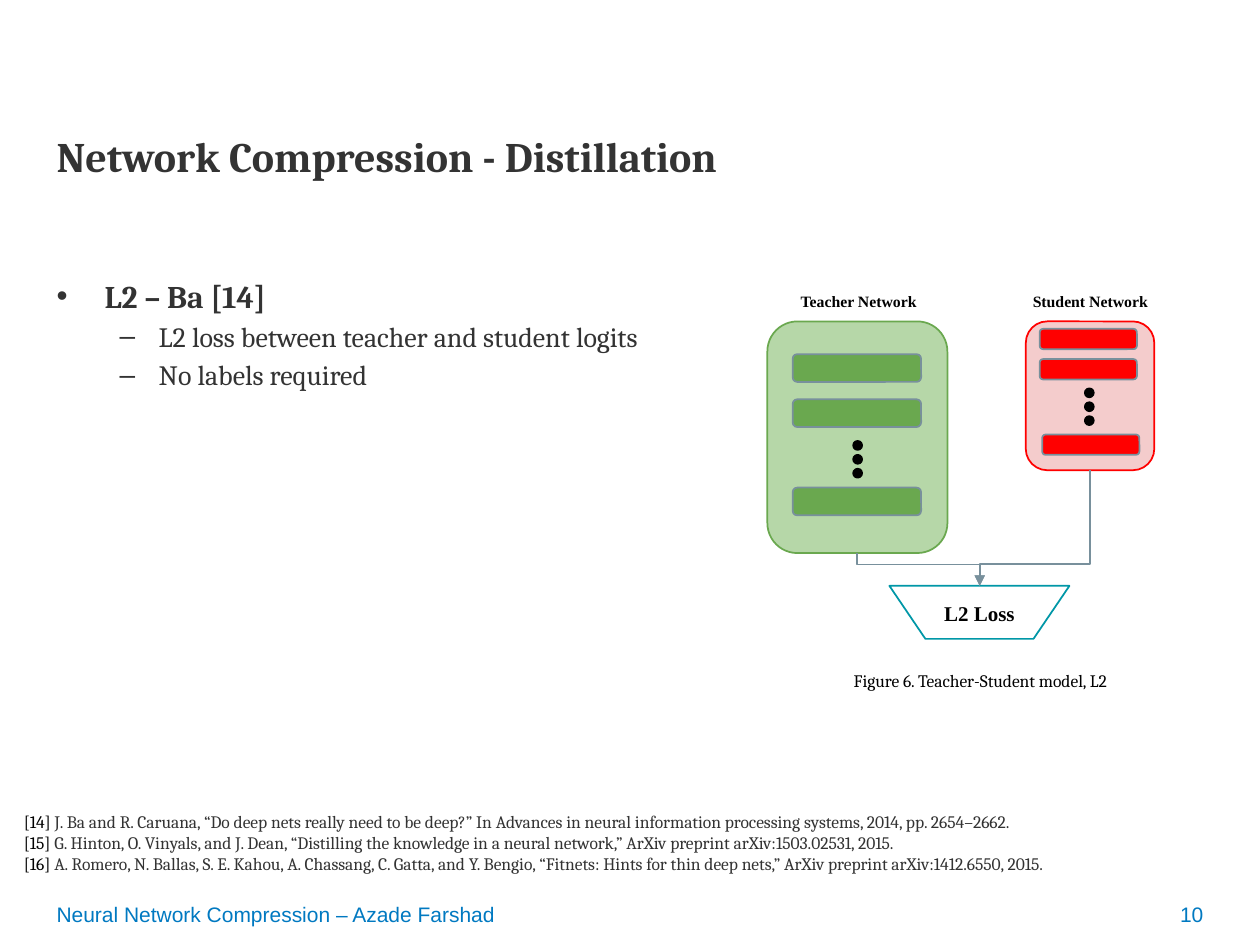
from lxml import etree
from pptx import Presentation
from pptx import util as u
from pptx.dml.color import RGBColor
from pptx.enum import shapes, text
from pptx.oxml import ns

BLUE = RGBColor(0x00, 0x79, 0xC1)
INK = RGBColor(0x33, 0x33, 0x33)
BLACK = RGBColor(0, 0, 0)
GREEN = RGBColor(0x6A, 0xA8, 0x4F)
PALE_GREEN = RGBColor(0xB6, 0xD7, 0xA8)
RED = RGBColor(0xFF, 0, 0)
PALE_RED = RGBColor(0xF4, 0xCC, 0xCC)
TEAL = RGBColor(0x00, 0x97, 0xA7)
SLATE = RGBColor(0x78, 0x90, 0x9C)
SERIF, TIMES, SANS = "Cambria", "Times New Roman", "Arial"
LEFT, CENTER, RIGHT = text.PP_ALIGN.LEFT, text.PP_ALIGN.CENTER, text.PP_ALIGN.RIGHT
TOP, MIDDLE = text.MSO_ANCHOR.TOP, text.MSO_ANCHOR.MIDDLE

REFERENCES = [
    ("[14] ", "J. Ba and R. Caruana, “Do deep nets really need to be deep?” In Advances in neural "
     "information processing systems, 2014, pp. 2654–2662."),
    ("[15] ", "G. Hinton, O. Vinyals, and J. Dean, “Distilling the knowledge in a neural network,” "
     "ArXiv preprint arXiv:1503.02531, 2015."),
    ("[16] ", "A. Romero, N. Ballas, S. E. Kahou, A. Chassang, C. Gatta, and Y. Bengio, “Fitnets: "
     "Hints for thin deep nets,” ArXiv preprint arXiv:1412.6550, 2015."),
]


def lengths(values):
    return [u.Cm(value) for value in values]


def add_span(para, words, size, font, color, bold=False):
    span = para.add_run()
    span.text = words
    span.font.size = u.Pt(size)
    span.font.name = font
    span.font.bold = bold
    span.font.color.rgb = color


def set_frame(box, anchor=TOP, inset=0.13):
    frame = box.text_frame
    frame.word_wrap = True
    frame.auto_size = text.MSO_AUTO_SIZE.NONE
    frame.vertical_anchor = anchor
    frame.margin_left = frame.margin_right = u.Cm(0.25)
    frame.margin_top = frame.margin_bottom = u.Cm(inset)
    return frame


def add_label(page, place, words, size, font, color, align=LEFT, anchor=TOP,
              bold=False, inset=0.13, spacing=1.0):
    box = page.shapes.add_textbox(*lengths(place))
    para = set_frame(box, anchor, inset).paragraphs[0]
    para.alignment = align
    para.line_spacing = spacing
    add_span(para, words, size, font, color, bold)


def place_holder(holder, place):
    holder.left, holder.top, holder.width, holder.height = lengths(place)
    return set_frame(holder)


def add_bullet(para, mark, margin, indent):
    properties = para._p.get_or_add_pPr()
    properties.set("marL", str(u.Cm(margin)))
    properties.set("indent", str(u.Cm(-indent)))
    color = etree.SubElement(properties, ns.qn("a:buClr"))
    etree.SubElement(color, ns.qn("a:srgbClr"), val=str(INK))
    etree.SubElement(properties, ns.qn("a:buFont"), typeface="Arial")
    etree.SubElement(properties, ns.qn("a:buChar"), char=mark)


def add_points(page):
    frame = place_holder(page.placeholders[1], (0.89, 5.33, 14.15, 10.19))
    points = [("L2 – Ba [14]", 0), ("L2 loss between teacher and student logits", 1),
              ("No labels required", 1)]
    styles = [("•", 0.97, 0.97, 18, True), ("–", 2.06, 0.79, 16, False)]
    for index, (words, level) in enumerate(points):
        mark, margin, indent, size, bold = styles[level]
        para = frame.add_paragraph() if index else frame.paragraphs[0]
        para.level = level
        add_bullet(para, mark, margin, indent)
        para.line_spacing = 1.15
        para.space_before = u.Pt(0)
        add_span(para, words, size, SERIF, INK, bold)


def add_block(parent, kind, place, fill, line):
    block = parent.shapes.add_shape(kind, *lengths(place))
    block.shadow.inherit = False
    if fill is None:
        block.fill.background()
    else:
        block.fill.solid()
        block.fill.fore_color.rgb = fill
    block.line.color.rgb = line
    block.line.width = u.Pt(1)
    return block


def add_network(page, place, fill, line, layers, size, dots):
    rounded = shapes.MSO_SHAPE.ROUNDED_RECTANGLE
    add_block(page, rounded, place, fill, line)
    for left, top in layers:
        add_block(page, rounded, (left, top, *size), line, SLATE)
    group = page.shapes.add_group_shape()
    left, top = dots
    for step in range(3):
        add_block(group, shapes.MSO_SHAPE.OVAL, (left, top + step * 0.28, 0.18, 0.18),
                  BLACK, BLACK)


def add_drop_arrow(page, start, end, bend):
    (x1, y1), (x2, y2) = start, end
    middle_x, middle_y = (x1 + x2) / 2, (y1 + y2) / 2
    half_width, half_height = (y2 - y1) / 2, abs(x2 - x1) / 2
    side = 1 if x2 > x1 else -1
    arrow = page.shapes.add_connector(
        shapes.MSO_CONNECTOR.ELBOW,
        *lengths((middle_x + side * half_width, middle_y - half_height,
                  middle_x - side * half_width, middle_y + half_height)))
    arrow.line.color.rgb = SLATE
    arrow.line.width = u.Pt(1)
    properties = arrow._element.spPr
    properties.find(ns.qn("a:xfrm")).set("rot", str((270 if side > 0 else 90) * 60000))
    guides = properties.find(ns.qn("a:prstGeom")).find(ns.qn("a:avLst"))
    etree.SubElement(guides, ns.qn("a:gd"), name="adj1", fmla=f"val {round(bend * 100000)}")
    etree.SubElement(arrow.line._get_or_add_ln(), ns.qn("a:tailEnd"), type="triangle")
    etree.SubElement(properties, ns.qn("a:effectLst"))


def add_loss(page):
    loss = add_block(page, shapes.MSO_SHAPE.FLOWCHART_MANUAL_OPERATION,
                     (17.93, 11.81, 3.63, 1.07), None, TEAL)
    para = set_frame(loss, MIDDLE).paragraphs[0]
    para.alignment = CENTER
    para.line_spacing = 1.1
    add_span(para, "L2 Loss", 12, TIMES, BLACK, True)


def add_diagram(page):
    add_network(page, (15.47, 6.48, 3.63, 4.67), PALE_GREEN, GREEN,
                [(15.98, 7.14), (15.98, 8.05), (15.98, 9.83)], (2.59, 0.56), (17.2, 8.89))
    add_network(page, (20.68, 6.48, 2.59, 3), PALE_RED, RED,
                [(20.96, 6.63), (20.96, 7.24), (21.01, 8.76)], (1.96, 0.41), (21.87, 7.83))
    add_loss(page)
    add_drop_arrow(page, (17.28, 11.15), (19.75, 11.81), 0.35)
    add_drop_arrow(page, (21.97, 9.48), (19.75, 11.81), 0.81)
    for left, words in ((15.75, "Teacher Network"), (20.42, "Student Network")):
        add_label(page, (left, 5.72, 3.12, 0.75), words, 9, TIMES, BLACK, CENTER,
                  bold=True, spacing=1.1)
    add_label(page, (15.72, 13.31, 8.08, 0.38), "Figure 6. Teacher-Student model, L2",
              10, SERIF, BLACK, CENTER, inset=0.25)


def add_references(page):
    box = page.shapes.add_textbox(*lengths((0.23, 16.1, 24.92, 0.99)))
    frame = set_frame(box, inset=0.25)
    for index, (number, citation) in enumerate(REFERENCES):
        para = frame.add_paragraph() if index else frame.paragraphs[0]
        add_span(para, number, 10, SERIF, BLACK)
        add_span(para, citation, 10, SERIF, INK)


def main():
    deck = Presentation()
    deck.slide_width, deck.slide_height = lengths((25.4, 19.05))
    page = deck.slides.add_slide(deck.slide_layouts[1])
    title = place_holder(page.shapes.title, (0.89, 2.51, 23.6, 2.41)).paragraphs[0]
    title.alignment = LEFT
    add_span(title, "Network Compression - Distillation", 24, SERIF, INK, True)
    add_points(page)
    add_diagram(page)
    add_references(page)
    add_label(page, (0.89, 18.01, 17.4, 0.84), "Neural Network Compression – Azade Farshad",
              12, SANS, BLUE, anchor=MIDDLE)
    add_label(page, (22.91, 18.01, 1.6, 0.84), "10", 12, SANS, BLUE, RIGHT, MIDDLE)
    deck.save("out.pptx")


if __name__ == "__main__":
    main()
